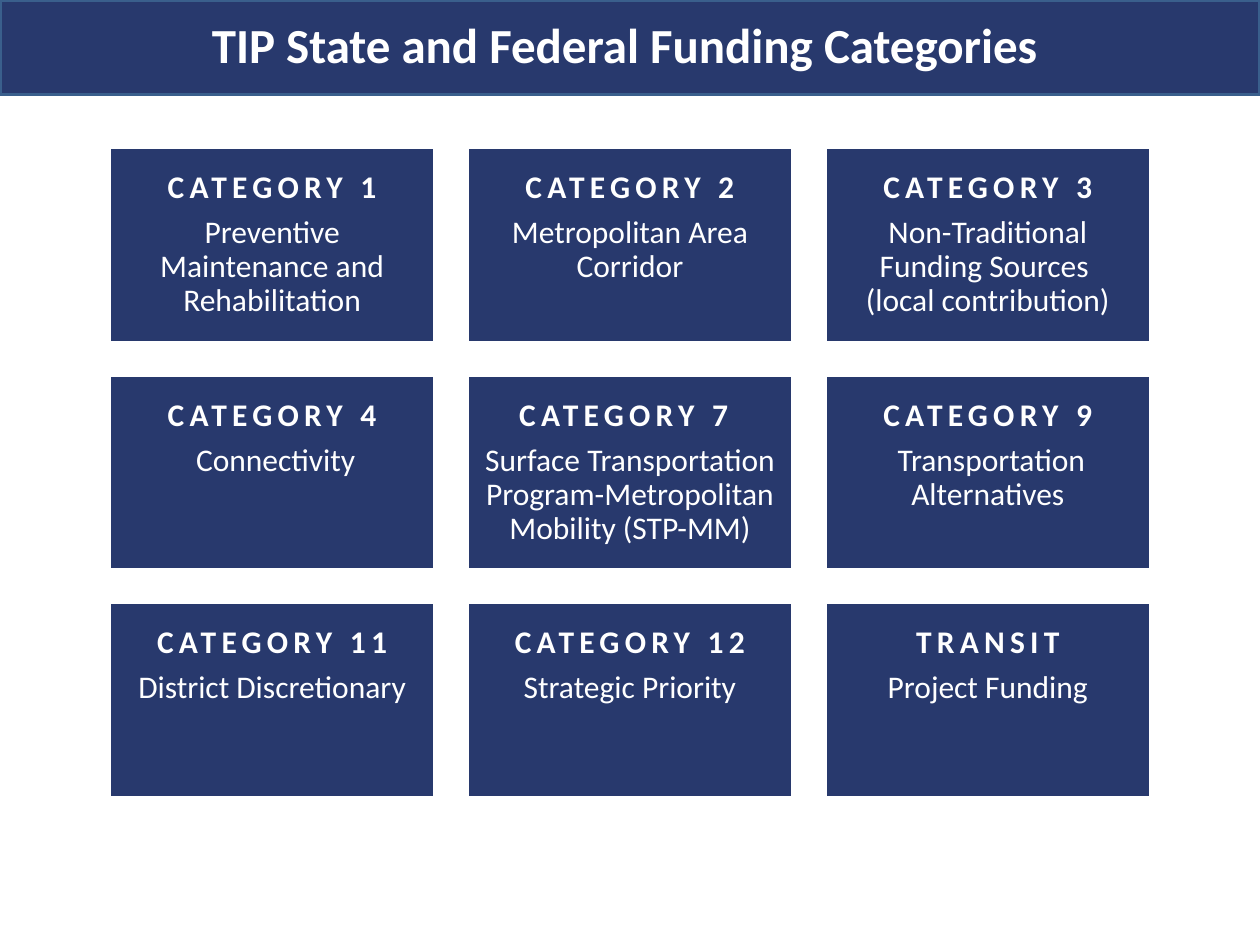
from pptx import Presentation
from pptx.dml.color import RGBColor
from pptx.enum.shapes import MSO_SHAPE
from pptx.enum.text import MSO_ANCHOR, PP_ALIGN
from pptx.util import Inches, Pt

NAVY = RGBColor(0x28, 0x39, 0x6D)
STEEL = RGBColor(0x3A, 0x5F, 0x8C)
WHITE = RGBColor(0xFF, 0xFF, 0xFF)
FONT = "Calibri"
COLUMNS = 3

CATEGORIES = [
    ("CATEGORY 1", ["Preventive Maintenance and Rehabilitation"]),
    ("CATEGORY 2", ["Metropolitan Area Corridor"]),
    ("CATEGORY 3", ["Non-Traditional Funding Sources ", "(local contribution)"]),
    ("CATEGORY 4", [" Connectivity"]),
    ("CATEGORY 7 ", ["Surface Transportation Program-Metropolitan Mobility (STP-MM)"]),
    ("CATEGORY 9", [" Transportation Alternatives"]),
    ("CATEGORY 11", ["District Discretionary"]),
    ("CATEGORY 12", ["Strategic Priority"]),
    ("TRANSIT", ["Project Funding"]),
]


def paint(box, line_color):
    box.fill.solid()
    box.fill.fore_color.rgb = NAVY
    box.line.color.rgb = line_color
    box.line.width = Pt(2)


def add_span(para, text, size, bold, spacing=0):
    span = para.add_run()
    span.text = text
    span.font.name = FONT
    span.font.size = Pt(size)
    span.font.bold = bold
    span.font.color.rgb = WHITE
    if spacing:
        span.font._element.set("spc", str(spacing * 100))


def center(para):
    para.alignment = PP_ALIGN.CENTER
    para.line_spacing = 0.9


def place_title(page, left, top, width, height):
    title = page.shapes.title
    title.left, title.top, title.width, title.height = left, top, width, height
    paint(title, STEEL)
    title.text_frame.vertical_anchor = MSO_ANCHOR.MIDDLE
    para = title.text_frame.paragraphs[0]
    center(para)
    add_span(para, "TIP State and Federal Funding Categories ", 28, True)


def add_category(page, left, top, width, height, name, lines):
    box = page.shapes.add_shape(MSO_SHAPE.RECTANGLE, left, top, width, height)
    box.shadow.inherit = False
    paint(box, WHITE)
    frame = box.text_frame
    frame.word_wrap = True
    frame.vertical_anchor = MSO_ANCHOR.TOP
    frame.margin_left = frame.margin_right = frame.margin_bottom = Inches(0.07)
    frame.margin_top = Inches(0.19)

    heading = frame.paragraphs[0]
    center(heading)
    heading.space_after = Pt(6.3)
    add_span(heading, name, 18, True, spacing=3)

    detail = frame.add_paragraph()
    center(detail)
    for number, line in enumerate(lines):
        if number:
            detail.add_line_break()
        add_span(detail, line, 18, False)


def add_category_grid(page, left, top, width, height):
    gap = Inches(0.26)
    rows = len(CATEGORIES) // COLUMNS
    box_width = (width - gap * (COLUMNS - 1)) // COLUMNS
    box_height = (height - gap * (rows - 1)) // rows
    for index, (name, lines) in enumerate(CATEGORIES):
        row, column = divmod(index, COLUMNS)
        add_category(page, left + column * (box_width + gap),
                     top + row * (box_height + gap),
                     box_width, box_height, name, lines)


def main():
    deck = Presentation()
    deck.slide_width = Inches(10)
    deck.slide_height = Inches(7.5)
    page = deck.slides.add_slide(deck.slide_layouts[5])
    place_title(page, Inches(0), Inches(0), deck.slide_width, Inches(0.75))
    add_category_grid(page, Inches(0.87), Inches(1.17), Inches(8.26), Inches(5.16))
    deck.save("out.pptx")


if __name__ == "__main__":
    main()
